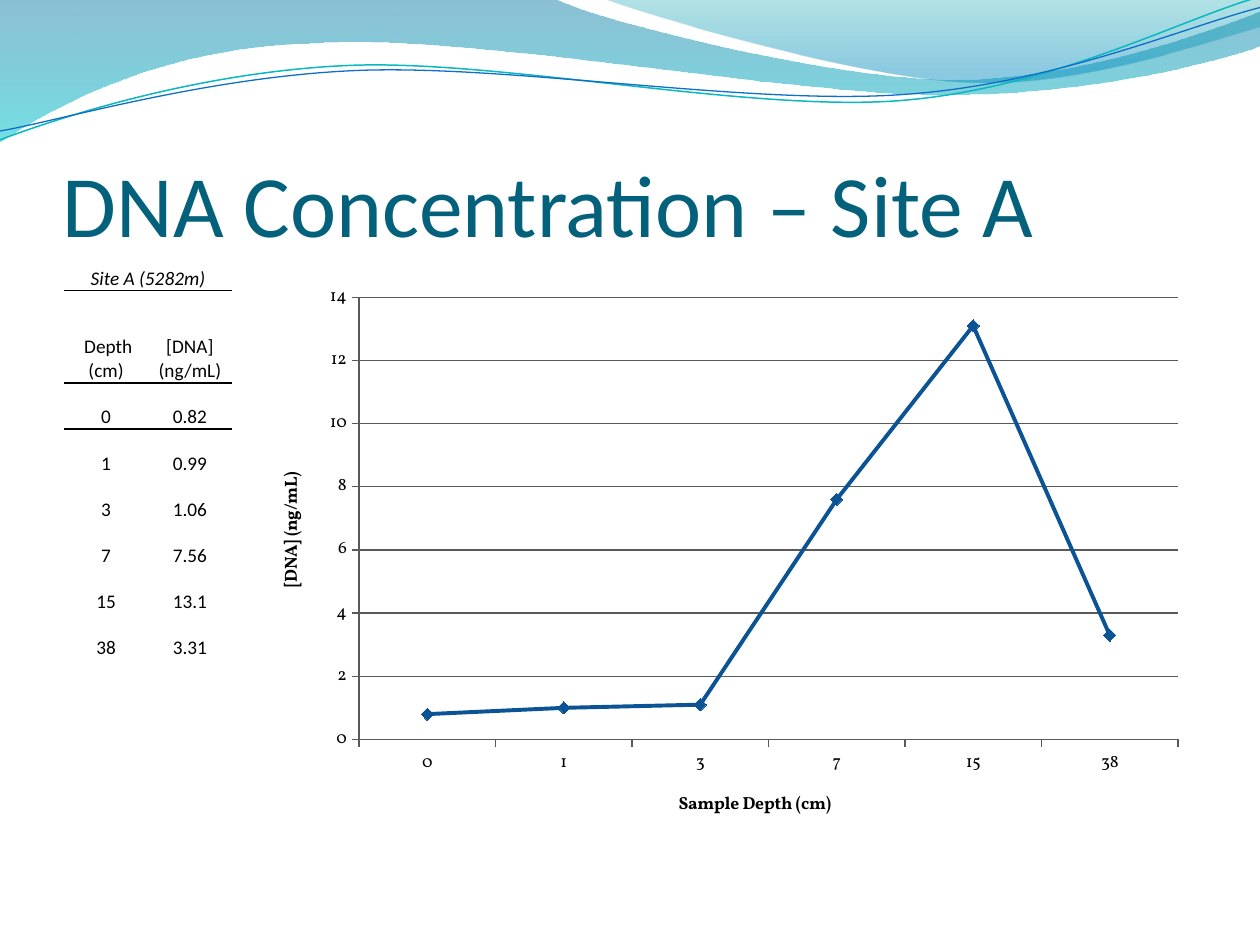
from lxml import etree
from pptx import Presentation
from pptx.chart.data import CategoryChartData
from pptx.dml.color import RGBColor
from pptx.enum.chart import XL_CHART_TYPE, XL_MARKER_STYLE, XL_TICK_MARK
from pptx.enum.text import MSO_ANCHOR, PP_ALIGN
from pptx.oxml.ns import qn
from pptx.util import Inches, Pt

LINE = XL_CHART_TYPE.LINE_MARKERS
DIAMOND = XL_MARKER_STYLE.DIAMOND
OUT = XL_TICK_MARK.OUTSIDE
BOTTOM = MSO_ANCHOR.BOTTOM
CENTER = PP_ALIGN.CENTER
PLAIN = "{2D5ABB26-0587-4C30-8999-92F81FD0307C}"  # table style without grid

COLORS = {
    "title": "04617B", "text": "000000", "series": "0B5395", "grid": "595959",
    "deep": "0074A1", "cyan": "00C6CF", "teal": "00A1A9", "sky": "008BBF",
    "thin_teal": "0AB8BF", "thin_blue": "0F6FC6",
}
SANS, SERIF = "Calibri", "Vollkorn"
DATA = [("0", 0.82), ("1", 0.99), ("3", 1.06),
        ("7", 7.56), ("15", 13.1), ("38", 3.31)]
WIDE, HIGH = 7.49, 4.52  # chart size

# Waves: a start point, then points (2 numbers) or cubic curves (6 numbers)
BAND = [(0, 0), (4.4, -0.01), (4.76, 0.17, 6.64, 0.63, 7.58, 0.63),
        (8.53, 0.63, 9.58, 0.26, 10, 0.09), (10.01, 0.36),
        (9.83, 0.44, 8.7, 0.76, 7.46, 0.75),
        (6.22, 0.75, 3.82, 0.28, 2.57, 0.34),
        (1.29, 0.36, 0.46, 0.83, -0.01, 1.13)]
CREST = [(4.79, -0.01), (5.09, 0.11, 6.82, 0.62, 7.69, 0.65),
         (8.56, 0.69, 9.61, 0.32, 10, 0.21), (10, 0)]
UPPER = [(0, 1.11), (0.48, 0.93, 1.58, 0.57, 2.77, 0.52),
         (3.95, 0.47, 5.93, 0.89, 7.13, 0.8),
         (8.33, 0.71, 9.38, 0.15, 9.98, -0.02)]
LOWER = [(0, 1.04), (0.47, 0.96, 1.64, 0.61, 2.83, 0.56),
         (4.03, 0.51, 5.97, 0.84, 7.17, 0.75),
         (8.36, 0.67, 9.41, 0.21, 10, 0.06)]


def rgb(name):
    return RGBColor.from_string(COLORS[name])


def style(font, size, name, color="text", bold=False, italic=False):
    font.size, font.name = Pt(size), name
    font.bold, font.italic = bold, italic
    font.color.rgb = rgb(color)


def add_wave(slide, steps, closed):
    """Draw all knots as a polygon, then bend each triple into a curve."""
    knots = [(Inches(step[i]), Inches(step[i + 1]))
             for step in steps for i in range(0, len(step), 2)]
    pen = slide.shapes.build_freeform(*knots[0])
    pen.add_line_segments(knots[1:], close=closed)
    shape = pen.convert_to_shape()
    shape.shadow.inherit = False
    lines = list(shape._element.iter(qn("a:lnTo")))
    for step in steps[1:]:
        size = len(step) // 2
        part, lines = lines[:size], lines[size:]
        if size == 3:
            curve = etree.Element(qn("a:cubicBezTo"))
            part[0].addprevious(curve)
            for line in part:
                curve.append(line[0])
                line.getparent().remove(line)
    return shape


def add_band(slide, steps, stops):
    """Filled wave; stops are (position, color, opacity in percent)."""
    shape = add_wave(slide, steps, True)
    shape.line.fill.background()
    shape.fill.gradient()
    shape.fill.gradient_angle = 270
    for stop, (pos, color, _) in zip(shape.fill.gradient_stops, stops):
        stop.position = pos
        stop.color.rgb = rgb(color)
    for tone, (_, _, alpha) in zip(shape._element.iter(qn("a:srgbClr")), stops):
        etree.SubElement(tone, qn("a:alpha"), val=str(alpha * 1000))


def add_thread(slide, steps, color, width):
    shape = add_wave(slide, steps, False)
    shape.fill.background()
    shape.line.color.rgb = rgb(color)
    shape.line.width = Pt(width)


def add_title(slide, text):
    box = slide.shapes.add_textbox(Inches(0.5), Inches(0.77),
                                   Inches(9), Inches(1.25))
    frame = box.text_frame
    frame.word_wrap = True
    frame.vertical_anchor = BOTTOM
    frame.margin_left = frame.margin_right = frame.margin_bottom = 0
    frame.margin_top = Inches(0.05)
    frame.text = text
    style(frame.paragraphs[0].font, 50, SANS, "title")


def place(item, **spots):
    """Give a chart part a manual layout, in inches within the chart."""
    layout = item.find(qn("c:layout"))
    if layout is None:
        layout = etree.Element(qn("c:layout"))
        item.insert(1 if item.find(qn("c:tx")) is not None else 0, layout)
    manual = etree.SubElement(layout, qn("c:manualLayout"))
    if "w" in spots:
        etree.SubElement(manual, qn("c:layoutTarget"), val="inner")
    for key in ("x", "y"):
        etree.SubElement(manual, qn(f"c:{key}Mode"), val="edge")
    for key, value in spots.items():
        share = value / (WIDE if key in "xw" else HIGH)
        etree.SubElement(manual, qn(f"c:{key}"), val=f"{share:.4f}")


def set_axis(axis, title, x, y):
    axis.major_tick_mark = OUT
    axis.format.line.color.rgb = rgb("grid")
    style(axis.tick_labels.font, 10, SERIF)
    frame = axis.axis_title.text_frame
    frame.text = title
    style(frame.paragraphs[0].font, 10, SERIF, bold=True)
    place(axis.axis_title._element, x=x, y=y)


def add_graph(slide):
    data = CategoryChartData()
    data.categories = [depth for depth, _ in DATA]
    data.add_series("Series 1", [round(value, 1) for _, value in DATA])
    chart = slide.shapes.add_chart(LINE, Inches(2.01), Inches(2.18),
                                   Inches(WIDE), Inches(HIGH), data).chart
    chart.has_legend = chart.has_title = False
    style(chart.font, 10, SERIF)
    place(chart._chartSpace.chart.plotArea, x=0.84, y=0.18, w=6.5, h=3.51)

    # Axes
    set_axis(chart.category_axis, "Sample Depth (cm)", 3.35, 4.08)
    values = chart.value_axis
    set_axis(values, "[DNA] (ng/mL)", 0.18, 1.54)
    values.minimum_scale, values.maximum_scale, values.major_unit = 0, 14, 2
    values.has_major_gridlines = True
    values.major_gridlines.format.line.color.rgb = rgb("grid")

    # Series
    plot = chart.plots[0]
    plot.vary_by_categories = False
    line = plot.series[0]
    line.smooth = False
    line.format.line.color.rgb = rgb("series")
    line.format.line.width = Pt(2.25)
    line.marker.style, line.marker.size = DIAMOND, 7
    line.marker.format.fill.solid()
    line.marker.format.fill.fore_color.rgb = rgb("series")
    line.marker.format.line.color.rgb = rgb("series")


def set_border(cell, side, width):
    edge = etree.Element(qn(f"a:{side}"), w=str(Pt(width)))
    fill = etree.SubElement(edge, qn("a:solidFill"))
    etree.SubElement(fill, qn("a:srgbClr"), val=COLORS["text"])
    props = cell._tc.get_or_add_tcPr()
    props.insert(len(props.findall(qn("a:lnT"))), edge)


def add_grid(slide):
    rows = [("Site A (5282m)", ""), (" Depth (cm)", "[DNA] (ng/mL)"), *DATA]
    wide, high = Inches(1.33), Inches(3.3)
    table = slide.shapes.add_table(len(rows), 2, Inches(0.51), Inches(1.94),
                                   wide, high).table
    table.first_row = table.horz_banding = False
    table._tbl.tblPr.find(qn("a:tableStyleId")).text = PLAIN
    rules = {0: 0.5, 1: 1}
    for col in table.columns:
        col.width = wide // 2
    for r, texts in enumerate(rows):
        # The heading row is twice as high as the others
        table.rows[r].height = high // (len(rows) + 1) * (2 if r == 1 else 1)
        for c, text in enumerate(texts):
            cell = table.cell(r, c)
            cell.text = str(text)
            cell.vertical_anchor = BOTTOM
            cell.margin_left = cell.margin_right = 0
            cell.margin_top = cell.margin_bottom = 0
            cell.fill.background()
            para = cell.text_frame.paragraphs[0]
            para.alignment = CENTER
            style(para.font, 11, SANS, italic=r == 0)
            if r - 1 in rules:
                set_border(cell, "lnT", rules[r - 1])
            if r in rules:
                set_border(cell, "lnB", rules[r])
    table.cell(0, 0).merge(table.cell(0, 1))


def main():
    deck = Presentation()
    deck.slide_width, deck.slide_height = Inches(10), Inches(7.5)
    slide = deck.slides.add_slide(deck.slide_layouts[6])
    # Waves along the top
    add_band(slide, BAND, [(0, "deep", 45), (1, "cyan", 55)])
    add_band(slide, CREST, [(0, "teal", 30), (0.8, "sky", 45)])
    add_thread(slide, UPPER, "thin_teal", 0.85)
    add_thread(slide, LOWER, "thin_blue", 0.75)
    # Content
    add_title(slide, "DNA Concentration – Site A")
    add_graph(slide)
    add_grid(slide)
    deck.save("out.pptx")


if __name__ == "__main__":
    main()
